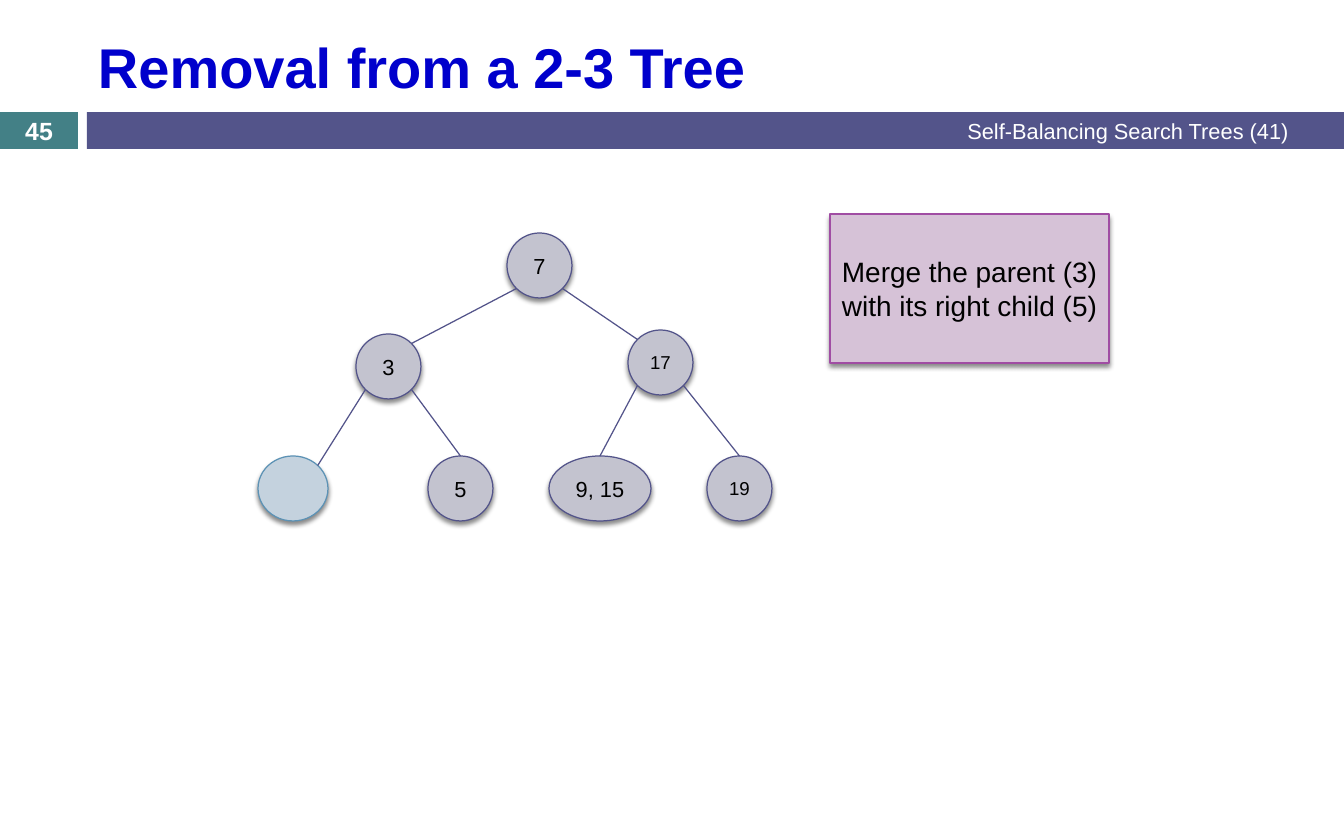
from math import cos, radians, sin

from lxml import etree
from pptx import Presentation
from pptx.dml.color import RGBColor
from pptx.enum.shapes import MSO_CONNECTOR, MSO_SHAPE
from pptx.enum.text import MSO_ANCHOR, PP_ALIGN
from pptx.oxml.ns import qn
from pptx.util import Pt

PX = 914400 // 112
RECT, OVAL = MSO_SHAPE.RECTANGLE, MSO_SHAPE.OVAL
STRAIGHT = MSO_CONNECTOR.STRAIGHT
MIDDLE = MSO_ANCHOR.MIDDLE
LEFT, CENTER, RIGHT = PP_ALIGN.LEFT, PP_ALIGN.CENTER, PP_ALIGN.RIGHT

BLACK = RGBColor(0x00, 0x00, 0x00)
WHITE = RGBColor(0xFF, 0xFF, 0xFF)
BLUE = RGBColor(0x00, 0x00, 0xCC)
TEAL = RGBColor(0x43, 0x80, 0x86)
INDIGO = RGBColor(0x53, 0x54, 0x8A)
GREY = RGBColor(0xC3, 0xC3, 0xCF)
PALE = RGBColor(0xC4, 0xD2, 0xDE)
STEEL = RGBColor(0x5C, 0x92, 0xB5)
PINK = RGBColor(0xD6, 0xC2, 0xD7)
PURPLE = RGBColor(0xA0, 0x4D, 0xA3)

SIZE = 65
LEAF = 456
# name: (left, top, width, text, font size)
NODES = {
    "root": (507, 233, SIZE, "7", 14),
    "three": (356, 334, SIZE, "3", 14),
    "right": (628, 330, SIZE, "17", 12),
    "hole": (258, LEAF, 70, "", 14),
    "five": (428, LEAF, SIZE, "5", 14),
    "pair": (549, LEAF, 102, "9, 15", 14),
    "last": (707, LEAF, SIZE, "19", 12),
}
# Angles run clockwise from the right-hand side.
SE, SW, NW, TOP, NE = 45, 135, 225, 270, 315
EDGES = [
    ("root", SW, "three", NE),
    ("root", SE, "right", NW),
    ("three", SW, "hole", NE),
    ("three", SE, "five", TOP),
    ("right", SW, "pair", TOP),
    ("right", SE, "last", TOP),
]


def scale(*nums):
    return [round(num * PX) for num in nums]


def write(shape, text, size, color=BLACK, align=CENTER, bold=False, inset=0):
    frame = shape.text_frame
    form = {
        "word_wrap": True,
        "vertical_anchor": MIDDLE,
        "margin_left": inset * PX,
        "margin_right": inset * PX,
        "margin_top": 0,
        "margin_bottom": 0,
    }
    for key, val in form.items():
        setattr(frame, key, val)
    para = frame.paragraphs[0]
    para.alignment = align
    run = para.add_run()
    run.text = text
    for key, val in {"name": "Arial", "size": Pt(size), "bold": bold}.items():
        setattr(run.font, key, val)
    run.font.color.rgb = color


def add_label(slide, box, text, size, color, **form):
    write(slide.shapes.add_textbox(*scale(*box)), text, size, color, **form)


def add_block(slide, kind, box, fill, line=None):
    """Add a filled shape; an outlined one also casts a shadow."""
    shape = slide.shapes.add_shape(kind, *scale(*box))
    shape.shadow.inherit = False
    shape.fill.solid()
    shape.fill.fore_color.rgb = fill
    if line is None:
        shape.line.fill.background()
    else:
        shape.line.color.rgb = line
        shape.line.width = Pt(0.79)
        cast(shape)
    return shape


def cast(shape):
    """Give the shape a soft shadow straight below it."""
    effects = shape._element.spPr.find(qn("a:effectLst"))
    shade = etree.SubElement(
        effects, qn("a:outerShdw"), blurRad=str(Pt(3)), dist=str(Pt(2.4)),
        dir="5400000", algn="ctr", rotWithShape="0")
    color = etree.SubElement(shade, qn("a:srgbClr"), val="000000")
    etree.SubElement(color, qn("a:alpha"), val="45000")


def add_node(slide, name):
    left, top, width, text, size = NODES[name]
    fill, line = (GREY, INDIGO) if text else (PALE, STEEL)
    node = add_block(slide, OVAL, (left, top, width, SIZE), fill, line)
    if text:
        write(node, text, size)


def rim(name, angle):
    """Return the point on a node's outline at the given angle."""
    left, top, width = NODES[name][:3]
    turn = radians(angle)
    return (left + width / 2 * (1 + cos(turn)),
            top + SIZE / 2 * (1 + sin(turn)))


def add_edge(slide, parent, start, child, end):
    ends = scale(*rim(parent, start), *rim(child, end))
    edge = slide.shapes.add_connector(STRAIGHT, *ends)
    edge.line.color.rgb = INDIGO
    edge.line.width = Pt(0.79)
    etree.SubElement(edge._element.spPr, qn("a:effectLst"))


def main():
    deck = Presentation()
    deck.slide_width, deck.slide_height = scale(1344, 840)
    slide = deck.slides.add_slide(deck.slide_layouts[6])

    badge = (0, 112, 78, 37)
    add_block(slide, RECT, badge, TEAL)
    add_block(slide, RECT, (87, 112, 1257, 37), INDIGO)

    for name in NODES:
        add_node(slide, name)
    for edge in EDGES:
        add_edge(slide, *edge)

    note = add_block(slide, RECT, (830, 214, 279, 149), PINK, PURPLE)
    write(note, "Merge the parent (3) with its right child (5)", 18, inset=8)

    add_label(slide, (504, 111, 796, 39), "Self-Balancing Search Trees (41)",
              14, WHITE, align=RIGHT, inset=11)
    add_label(slide, badge, "45", 16, WHITE, bold=True)
    add_label(slide, (87, 21, 1198, 90), "Removal from a 2-3 Tree",
              36, BLUE, align=LEFT, bold=True, inset=11)
    deck.save("out.pptx")


if __name__ == "__main__":
    main()
